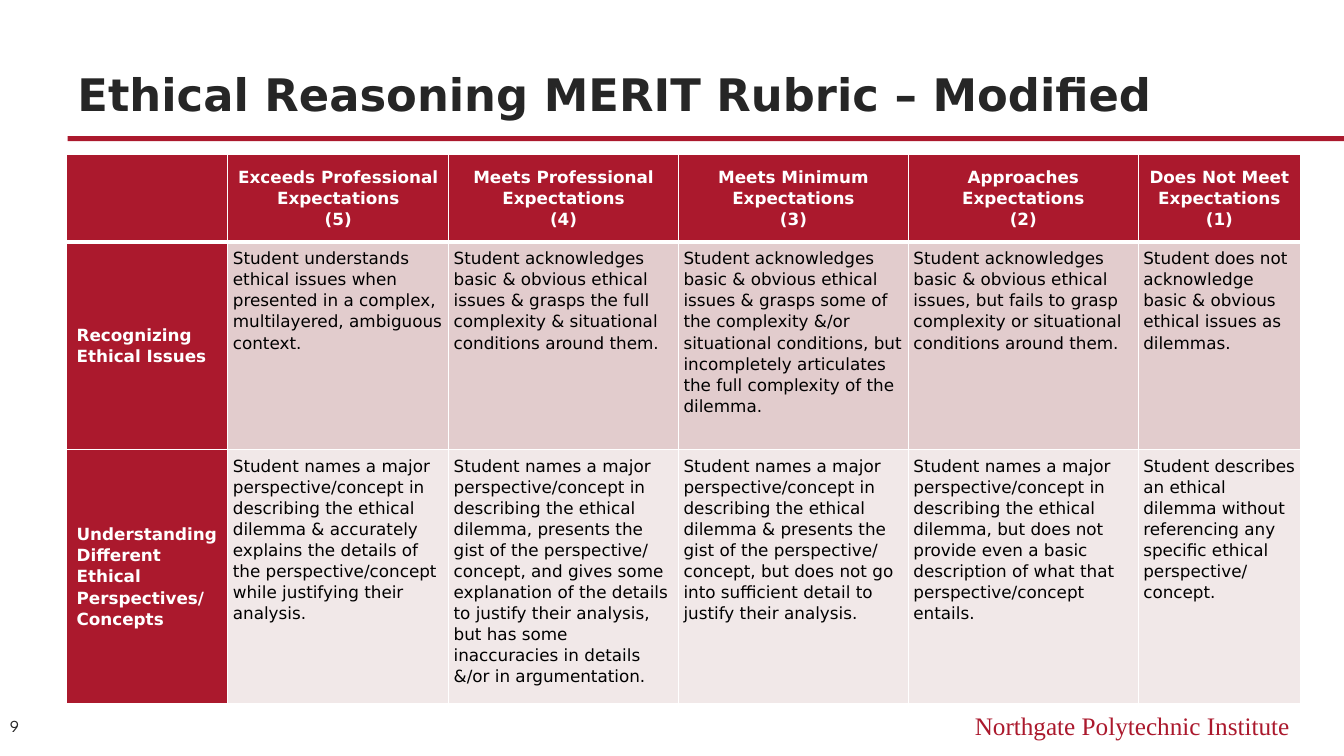
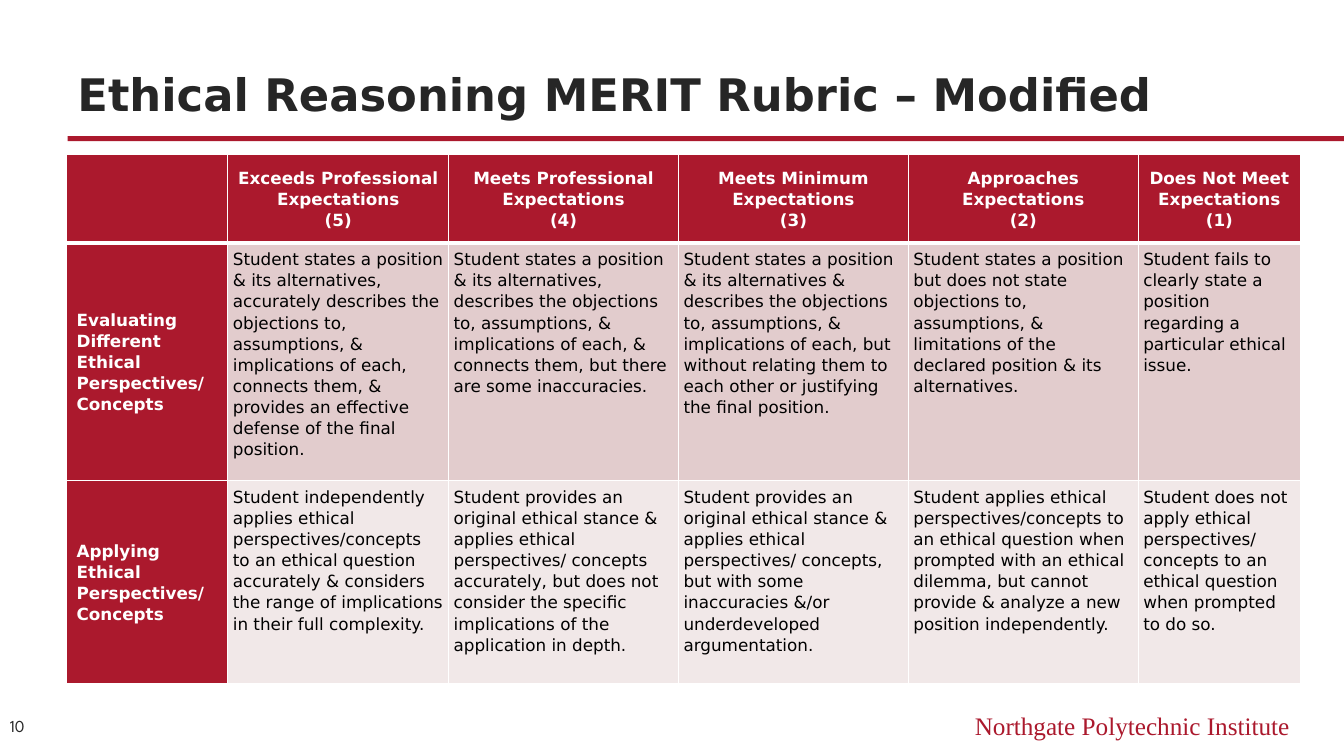
from lxml import etree
from pptx import Presentation
from pptx.dml.color import RGBColor
from pptx.enum import shapes, text
from pptx.oxml import ns
from pptx.util import Inches, Pt

CRIMSON = RGBColor(0xAB, 0x19, 0x2D)
INK = RGBColor(0x26, 0x26, 0x26)
BLACK = RGBColor(0, 0, 0)
WHITE = RGBColor(0xFF, 0xFF, 0xFF)
BANDS = (RGBColor(0xE2, 0xCC, 0xCD), RGBColor(0xF1, 0xE8, 0xE8))
SANS = "DejaVu Sans"

TITLE = "Ethical Reasoning MERIT Rubric – Modified"
INSTITUTE = "Northgate Polytechnic Institute"
LEVELS = (
    "Exceeds Professional Expectations",
    "Meets Professional Expectations",
    "Meets Minimum Expectations",
    "Approaches\nExpectations",
    "Does Not Meet Expectations",
)
COLUMN_WIDTHS = (1.6, 2.19, 2.28, 2.28, 2.28, 1.61)

RUBRICS = (
    {
        "number": 9,
        "row_heights": (0.87, 2.06, 2.52),
        "criteria": (
            (
                "Recognizing Ethical Issues",
                "Student understands ethical issues when presented in a complex, multilayered, ambiguous context.",
                "Student acknowledges basic & obvious ethical issues & grasps the full complexity & situational "
                "conditions around them.",
                "Student acknowledges basic & obvious ethical issues & grasps some of the complexity &/or "
                "situational conditions, but incompletely articulates the full complexity of the dilemma.",
                "Student acknowledges basic & obvious ethical issues, but fails to grasp complexity or "
                "situational conditions around them.",
                "Student does not acknowledge basic & obvious ethical issues as dilemmas.",
            ),
            (
                "Understanding Different Ethical Perspectives/ Concepts",
                "Student names a major perspective/concept in describing the ethical dilemma & accurately "
                "explains the details of the perspective/concept while justifying their analysis.",
                "Student names a major perspective/concept in describing the ethical dilemma, presents the gist "
                "of the perspective/ concept, and gives some explanation of the details to justify their "
                "analysis, but has some inaccuracies in details &/or in argumentation.",
                "Student names a major perspective/concept in describing the ethical dilemma & presents the gist "
                "of the perspective/ concept, but does not go into sufficient detail to justify their analysis.",
                "Student names a major perspective/concept in describing the ethical dilemma, but does not "
                "provide even a basic description of what that perspective/concept entails.",
                "Student describes an ethical dilemma without referencing any specific ethical perspective/ "
                "concept.",
            ),
        ),
    },
    {
        "number": 10,
        "row_heights": (0.88, 2.36, 2.01),
        "criteria": (
            (
                "Evaluating Different Ethical Perspectives/ Concepts",
                "Student states a position & its alternatives, accurately describes the objections to, "
                "assumptions, & implications of each, connects them, & provides an effective defense of the "
                "final position.",
                "Student states a position & its alternatives, describes the objections to, assumptions, & "
                "implications of each, & connects them, but there are some inaccuracies.",
                "Student states a position & its alternatives & describes the objections to, assumptions, & "
                "implications of each, but without relating them to each other or justifying the final position.",
                "Student states a position but does not state objections to, assumptions, & limitations of the "
                "declared position & its alternatives.",
                "Student fails to clearly state a position regarding a particular ethical issue.",
            ),
            (
                "Applying Ethical Perspectives/ Concepts",
                "Student independently applies ethical perspectives/concepts to an ethical question accurately "
                "& considers the range of implications in their full complexity.",
                "Student provides an original ethical stance & applies ethical perspectives/ concepts "
                "accurately, but does not consider the specific implications of the application in depth.",
                "Student provides an original ethical stance & applies ethical perspectives/ concepts, but with "
                "some inaccuracies &/or underdeveloped argumentation.",
                "Student applies ethical perspectives/concepts to an ethical question when prompted with an "
                "ethical dilemma, but cannot provide & analyze a new position independently.",
                "Student does not apply ethical perspectives/ concepts to an ethical question when prompted to "
                "do so.",
            ),
        ),
    },
)


def write(frame, words, size=12, font=SANS, color=BLACK, bold=False, align=text.PP_ALIGN.LEFT, spacing=1.0):
    frame.word_wrap = True
    for index, line in enumerate(words.split("\n")):
        para = frame.paragraphs[0] if index == 0 else frame.add_paragraph()
        para.alignment = align
        para.line_spacing = spacing
        span = para.add_run()
        span.text = line
        span.font.size = Pt(size)
        span.font.name = font
        span.font.bold = bold
        span.font.color.rgb = color


def add_text(page, words, left, top, width, height, anchor=text.MSO_ANCHOR.TOP, **style):
    box = page.shapes.add_textbox(Inches(left), Inches(top), Inches(width), Inches(height))
    box.text_frame.vertical_anchor = anchor
    write(box.text_frame, words, **style)


def add_frame(page, number):
    rule = page.shapes.add_shape(
        shapes.MSO_SHAPE.RECTANGLE, Inches(0.67), Inches(1.35), Inches(12.67), Inches(0.05))
    rule.shadow.inherit = False
    rule.fill.solid()
    rule.fill.fore_color.rgb = CRIMSON
    rule.line.fill.background()
    add_text(page, INSTITUTE, 8, 7, 4.89, 0.4,
             size=18, font="Times New Roman", color=CRIMSON, align=text.PP_ALIGN.RIGHT)
    add_text(page, TITLE, 0.67, 0.36, 12, 0.88, text.MSO_ANCHOR.BOTTOM, size=32, color=INK, bold=True)
    add_text(page, str(number), 0, 6.99, 0.67, 0.43, text.MSO_ANCHOR.MIDDLE, font="League Spartan", color=INK)


def add_borders(cell, **widths):
    properties = cell._tc.get_or_add_tcPr()
    for side in "LRTB":
        line = etree.SubElement(properties, ns.qn(f"a:ln{side}"), w=str(Pt(widths.get(side, 1))))
        fill = etree.SubElement(line, ns.qn("a:solidFill"))
        etree.SubElement(fill, ns.qn("a:srgbClr"), val=str(WHITE))


def fill_cell(cell, words, row, column):
    is_header, is_label = row == 0, column == 0
    is_strong = is_header or is_label
    add_borders(cell, **({"B": 3} if is_header else {"T": 3} if row == 1 else {}))
    cell.fill.solid()
    cell.fill.fore_color.rgb = CRIMSON if is_strong else BANDS[row - 1]
    cell.margin_left = Inches(0.1 if is_label else 0.05)
    cell.margin_right = Inches(0.05)
    cell.margin_top = Inches(0 if is_strong else 0.06)
    cell.margin_bottom = Inches(0)
    cell.vertical_anchor = text.MSO_ANCHOR.MIDDLE if is_strong else text.MSO_ANCHOR.TOP
    if words:
        write(cell.text_frame, words, color=WHITE if is_strong else BLACK, bold=is_strong, spacing=1.07,
              align=text.PP_ALIGN.CENTER if is_header else text.PP_ALIGN.LEFT)


def add_rubric(page, row_heights, criteria):
    scores = range(len(LEVELS), 0, -1)
    header = ("", *(f"{level}\n({score})" for level, score in zip(LEVELS, scores)))
    rows = (header, *criteria)
    table = page.shapes.add_table(
        len(rows), len(header), Inches(0.66), Inches(1.53),
        Inches(sum(COLUMN_WIDTHS)), Inches(sum(row_heights))).table
    for column, width in zip(table.columns, COLUMN_WIDTHS):
        column.width = Inches(width)
    for row, height in zip(table.rows, row_heights):
        row.height = Inches(height)
    for row, entries in enumerate(rows):
        for column, words in enumerate(entries):
            fill_cell(table.cell(row, column), words, row, column)


def main():
    deck = Presentation()
    deck.slide_width, deck.slide_height = Inches(13.33), Inches(7.5)
    for rubric in RUBRICS:
        page = deck.slides.add_slide(deck.slide_layouts[6])
        add_frame(page, rubric["number"])
        add_rubric(page, rubric["row_heights"], rubric["criteria"])
    deck.save("out.pptx")


if __name__ == "__main__":
    main()
